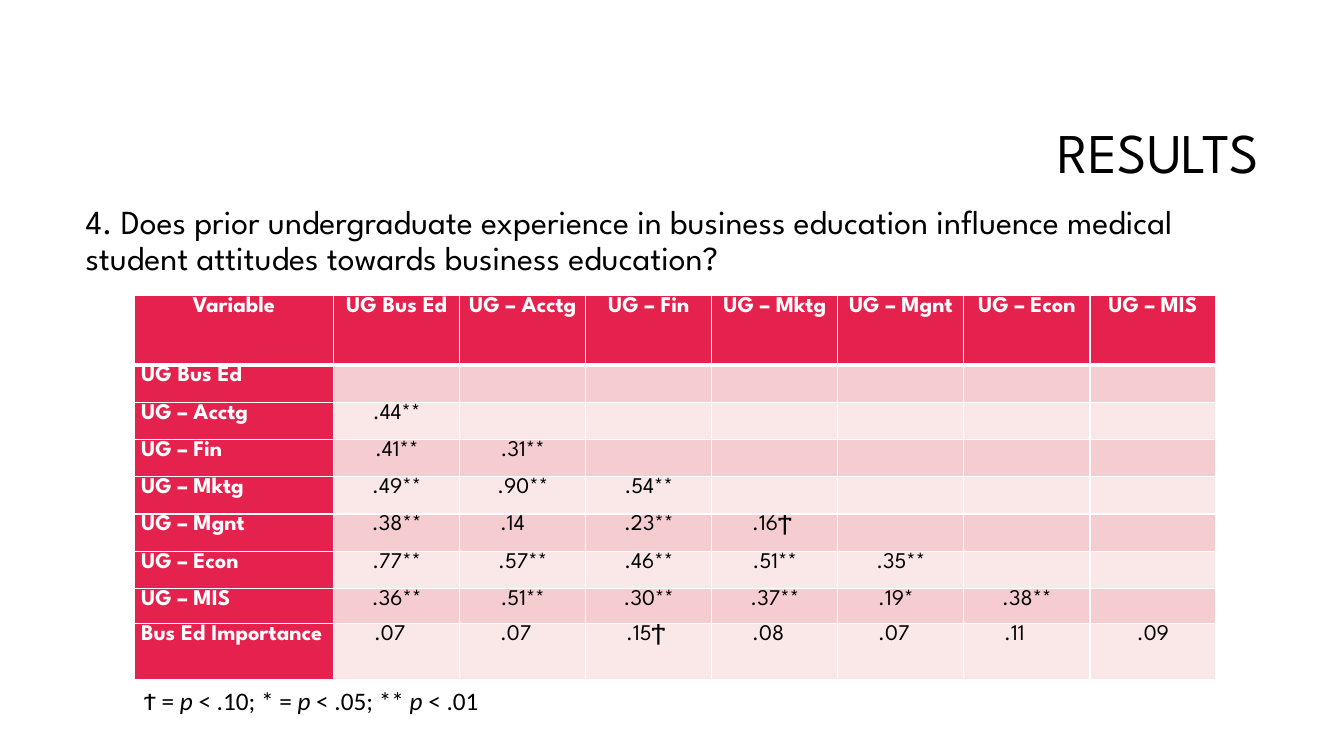
import pptx
import pptx.dml.color
import pptx.enum.text
import pptx.oxml
import pptx.oxml.ns
import pptx.util
from pptx.util import Inches

RGBColor = pptx.dml.color.RGBColor
ALIGN = pptx.enum.text.PP_ALIGN
ANCHOR = pptx.enum.text.MSO_ANCHOR

BLACK = RGBColor(0x00, 0x00, 0x00)
WHITE = RGBColor(0xFF, 0xFF, 0xFF)
CRIMSON = RGBColor(0xE5, 0x22, 0x4E)
PINK = RGBColor(0xF5, 0xCD, 0xD0)
PALE_PINK = RGBColor(0xFA, 0xE8, 0xE9)

HEADING_FONT = "League Spartan"
NOTE_FONT = "Calibri"

SUBJECTS = ["UG Bus Ed", "UG – Acctg", "UG – Fin", "UG – Mktg",
            "UG – Mgnt", "UG – Econ", "UG – MIS"]
VARIABLES = SUBJECTS + ["Bus Ed Importance"]
CORRELATIONS = [
    [],
    [".44**"],
    [".41**", ".31**"],
    [".49**", ".90**", ".54**"],
    [".38**", ".14", ".23**", ".16Ϯ"],
    [".77**", ".57**", ".46**", ".51**", ".35**"],
    [".36**", ".51**", ".30**", ".37**", ".19*", ".38**"],
    [".07", ".07", ".15Ϯ", ".08", ".07", ".11", ".09"],
]
COLUMN_WIDTHS = [1.98] + [1.25] * len(SUBJECTS)
ROW_HEIGHTS = [0.69] + [0.37] * 6 + [0.35, 0.55]
SIGNIFICANCE_NOTE = [("Ϯ =", False), (" p ", True), ("< .10; * = ", False),
                     ("p", True), (" < .05; ** ", False), ("p", True),
                     (" < .01", False)]


def add_run(para, text, size, font=HEADING_FONT, color=BLACK, bold=False, italic=False):
    span = para.add_run()
    span.text = text
    span.font.name = font
    span.font.size = pptx.util.Pt(size)
    span.font.color.rgb = color
    span.font.bold = bold
    span.font.italic = italic


def place(shape, left, top, width, height):
    shape.left, shape.top = Inches(left), Inches(top)
    shape.width, shape.height = Inches(width), Inches(height)


def fill_title(title):
    place(title, 3.17, 0.84, 9.42, 1.41)
    title.text_frame.vertical_anchor = ANCHOR.MIDDLE
    para = title.text_frame.paragraphs[0]
    para.alignment = ALIGN.RIGHT
    para.line_spacing = 0.9
    add_run(para, "RESULTS", 40)


def fill_question(body):
    place(body, 0.75, 1.99, 11.83, 4.44)
    body.text_frame.vertical_anchor = ANCHOR.TOP
    para = body.text_frame.paragraphs[0]
    para.line_spacing = 0.9
    para.space_before = pptx.util.Pt(0)
    properties = para._p.get_or_add_pPr()
    properties.set("marL", "0")
    properties.set("indent", "0")
    properties.append(pptx.oxml.parse_xml(
        f"<a:buNone {pptx.oxml.ns.nsdecls('a')}/>"))
    add_run(para, "4. Does prior undergraduate experience in business education "
                  "influence medical student attitudes towards business education?", 24)


def set_borders(cell, top=1, bottom=1):
    """Draw white cell edges; widths are in points."""
    properties = cell._tc.get_or_add_tcPr()
    widths = {"lnL": 1, "lnR": 1, "lnT": top, "lnB": bottom}
    for index, (edge, width) in enumerate(widths.items()):
        properties.insert(index, pptx.oxml.parse_xml(
            f'<a:{edge} {pptx.oxml.ns.nsdecls("a")} w="{pptx.util.Pt(width)}">'
            f'<a:solidFill><a:srgbClr val="{WHITE}"/></a:solidFill></a:{edge}>'))


def fill_cell(cell, text, fill, alignment, color=BLACK, bold=False, indent=0.07):
    cell.margin_left, cell.margin_right = Inches(indent), Inches(0.07)
    cell.margin_top = cell.margin_bottom = 0
    cell.fill.solid()
    cell.fill.fore_color.rgb = fill
    if text:
        para = cell.text_frame.paragraphs[0]
        para.alignment = alignment
        para.line_spacing = 1.07
        add_run(para, text, 16, color=color, bold=bold)


def fill_value(cell, text, fill, is_last_column):
    """Centre starred pairs and the last column; indent the other values."""
    if text.endswith("**") or is_last_column:
        fill_cell(cell, text, fill, ALIGN.CENTER)
    else:
        fill_cell(cell, text, fill, ALIGN.LEFT, indent=0.4 if text else 0.07)


def add_correlation_table(page):
    frame = page.shapes.add_table(len(ROW_HEIGHTS), len(COLUMN_WIDTHS),
                                  Inches(1.33), Inches(2.93), Inches(10.7), Inches(3.82))
    table = frame.table
    table.horz_banding = False
    for column, width in zip(table.columns, COLUMN_WIDTHS):
        column.width = Inches(width)
    for row, height in zip(table.rows, ROW_HEIGHTS):
        row.height = Inches(height)

    for column, name in enumerate(["Variable"] + SUBJECTS):
        fill_cell(table.cell(0, column), name, CRIMSON, ALIGN.CENTER, WHITE, True)
        set_borders(table.cell(0, column), bottom=3)

    for row, (name, values) in enumerate(zip(VARIABLES, CORRELATIONS), start=1):
        fill_cell(table.cell(row, 0), name, CRIMSON, ALIGN.LEFT, WHITE, True)
        band = PINK if row % 2 else PALE_PINK
        padded = values + [""] * (len(SUBJECTS) - len(values))
        for column, value in enumerate(padded, start=1):
            fill_value(table.cell(row, column), value, band, column == len(SUBJECTS))
        for cell in table.rows[row].cells:
            set_borders(cell, top=3 if row == 1 else 1)


def add_significance_note(page):
    box = page.shapes.add_textbox(Inches(1.33), Inches(6.75), Inches(3.57), Inches(0.4))
    box.text_frame.word_wrap = False
    para = box.text_frame.paragraphs[0]
    for text, italic in SIGNIFICANCE_NOTE:
        add_run(para, text, 18, font=NOTE_FONT, italic=italic)


def main():
    deck = pptx.Presentation()
    deck.slide_width, deck.slide_height = Inches(13.33), Inches(7.5)
    page = deck.slides.add_slide(deck.slide_layouts[1])
    fill_title(page.shapes.title)
    fill_question(page.placeholders[1])
    add_correlation_table(page)
    add_significance_note(page)
    deck.save("out.pptx")


if __name__ == "__main__":
    main()
